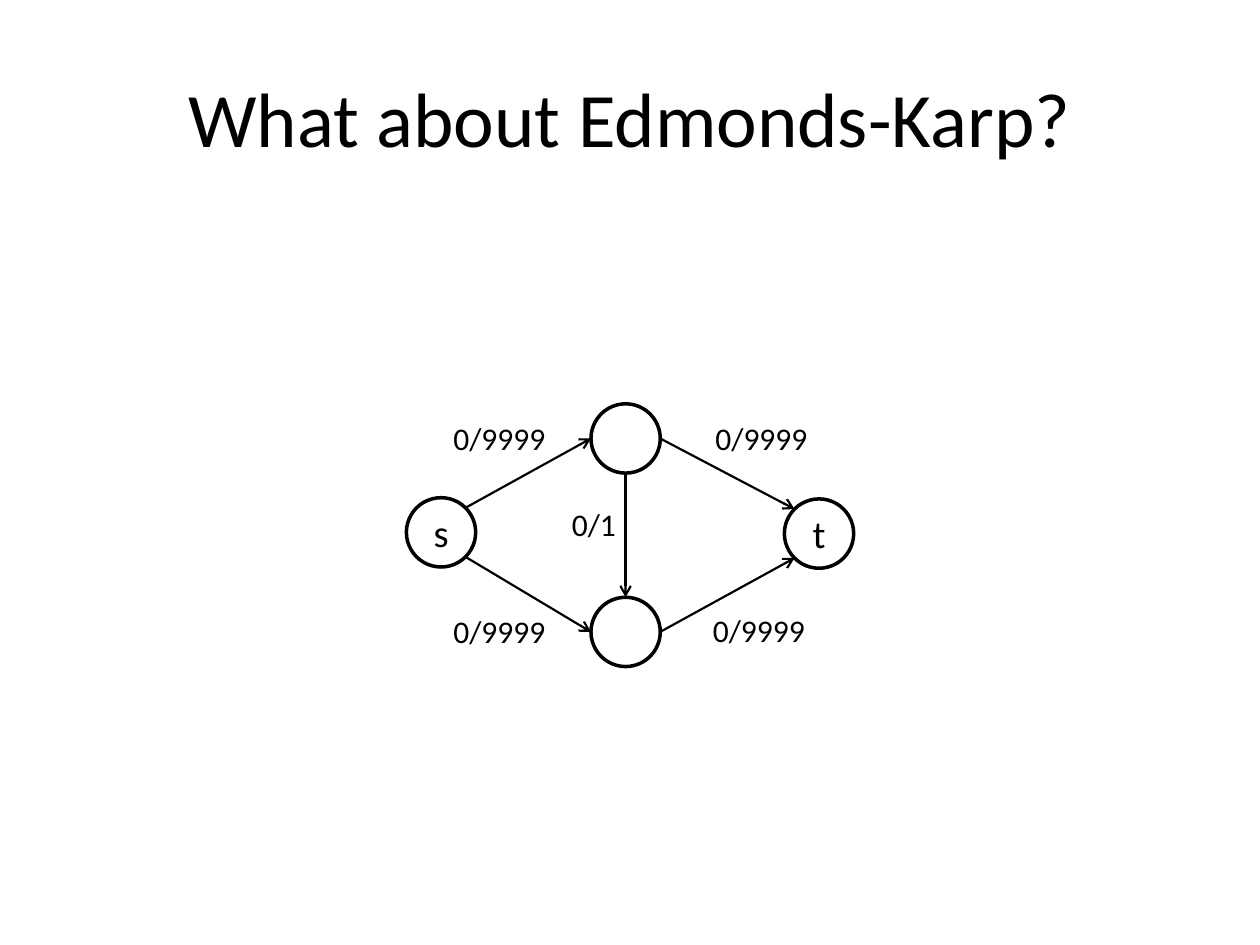
from dataclasses import dataclass
from math import cos, radians, sin

from lxml.etree import SubElement
from pptx import Presentation
from pptx.dml.color import RGBColor
from pptx.enum.shapes import MSO_CONNECTOR as Connector, MSO_SHAPE as Shape
from pptx.enum.text import MSO_ANCHOR as Anchor, MSO_AUTO_SIZE as AutoSize, PP_ALIGN as Align
from pptx.oxml.ns import qn
from pptx.util import Inches, Pt

COLUMNS, ROWS = 100, 75


@dataclass(frozen=True)
class Theme:
    font: str = "Calibri"
    ink: RGBColor = RGBColor(0, 0, 0)
    title_size: float = 44
    node_size: float = 22
    label_size: float = 18
    node_line: float = 2
    edge_line: float = 1.25
    diameter: float = 5.5


class FlowSlide:
    """Draws on one slide; lengths are columns and rows of the grid."""

    def __init__(self, deck, theme):
        self.theme = theme
        self.column = deck.slide_width / COLUMNS
        self.row = deck.slide_height / ROWS
        self.shapes = deck.slides.add_slide(deck.slide_layouts[6]).shapes

    def place(self, *lengths):
        """Turn alternating columns and rows into slide lengths."""
        units = (self.column, self.row)
        return [round(length * units[i % 2]) for i, length in enumerate(lengths)]

    def set_text(self, frame, text, size, align):
        frame.text = text
        paragraph = frame.paragraphs[0]
        paragraph.alignment = align
        for run in paragraph.runs:
            run.font.name = self.theme.font
            run.font.size = Pt(size)
            run.font.color.rgb = self.theme.ink

    def title(self, text, *box):
        frame = self.shapes.add_textbox(*self.place(*box)).text_frame
        frame.word_wrap = True
        frame.vertical_anchor = Anchor.MIDDLE
        self.set_text(frame, text, self.theme.title_size, Align.CENTER)

    def node(self, text, center):
        size = self.theme.diameter
        x, y = center
        circle = self.shapes.add_shape(
            Shape.OVAL, *self.place(x - size / 2, y - size / 2, size, size))
        circle.shadow.inherit = False
        circle.fill.background()
        circle.line.color.rgb = self.theme.ink
        circle.line.width = Pt(self.theme.node_line)
        if text:
            circle.text_frame.vertical_anchor = Anchor.MIDDLE
            self.set_text(circle.text_frame, text, self.theme.node_size, Align.CENTER)

    def rim(self, center, angle):
        """Point on a node's outline, clockwise from the right in degrees."""
        radius, turn = self.theme.diameter / 2, radians(angle)
        return center[0] + radius * cos(turn), center[1] + radius * sin(turn)

    def edge(self, start, start_angle, end, end_angle):
        arrow = self.shapes.add_connector(
            Connector.STRAIGHT,
            *self.place(*self.rim(start, start_angle), *self.rim(end, end_angle)))
        arrow.line.color.rgb = self.theme.ink
        arrow.line.width = Pt(self.theme.edge_line)
        SubElement(arrow.get_or_add_ln(), qn("a:tailEnd"), type="arrow")
        SubElement(arrow._element.spPr, qn("a:effectLst"))

    def label(self, text, left, top, width):
        frame = self.shapes.add_textbox(*self.place(left, top, width, 4)).text_frame
        frame.word_wrap = False
        frame.auto_size = AutoSize.SHAPE_TO_FIT_TEXT
        self.set_text(frame, text, self.theme.label_size, Align.LEFT)


def main():
    deck = Presentation()
    deck.slide_width, deck.slide_height = Inches(10), Inches(7.5)
    slide = FlowSlide(deck, Theme())
    slide.title("What about Edmonds-Karp?", 5, 3, 90, 12.5)

    source, upper, lower, sink = (35, 42.25), (49.65, 34.8), (49.65, 50.15), (65, 42.35)
    for name, center in (("s", source), ("", upper), ("", lower), ("t", sink)):
        slide.node(name, center)

    right, down_right, down, down_left, left, up_left, up, up_right = range(0, 360, 45)
    for edge in (
        (source, up_right, upper, left),
        (source, down_right, lower, left),
        (upper, right, sink, up_left),
        (lower, right, sink, down_left),
        (upper, down, lower, up),
    ):
        slide.edge(*edge)

    for left_column, top_row in ((35, 32.8), (35, 48.1), (55.6, 48), (55.8, 32.8)):
        slide.label("0/9999", left_column, top_row, 9.4)
    slide.label("0/1", 44.4, 39.6, 5.6)

    deck.save("out.pptx")


if __name__ == "__main__":
    main()
